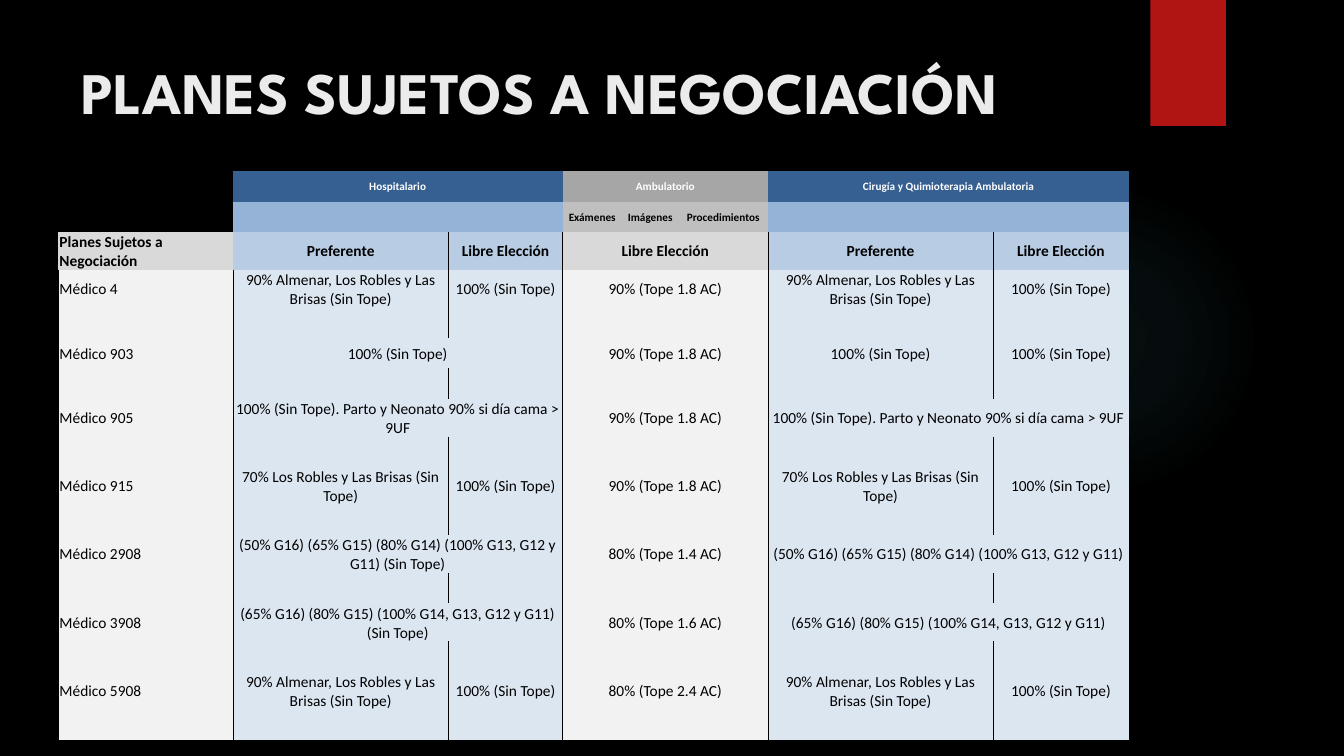
from dataclasses import dataclass
from typing import Any

from lxml import etree
from pptx import Presentation
from pptx.dml.color import RGBColor
from pptx.enum.shapes import MSO_SHAPE
from pptx.enum.text import MSO_ANCHOR, PP_ALIGN
from pptx.oxml.ns import qn
from pptx.util import Inches, Pt

OVAL, RECT = MSO_SHAPE.OVAL, MSO_SHAPE.RECTANGLE
TOP, MIDDLE = MSO_ANCHOR.TOP, MSO_ANCHOR.MIDDLE
LEFT, CENTER = PP_ALIGN.LEFT, PP_ALIGN.CENTER
UNIT = Inches(0.01)
WIDE, HIGH = 1333, 750
COLS = (173, 214, 113, 26, 33, 25, 31, 32, 57, 223, 135)
ROW = 30
EDGES = {0, 1, 2, 3, 9, 10, 11}
INSETS = {"margin_left": UNIT, "margin_right": UNIT, "margin_top": UNIT, "margin_bottom": 0}


@dataclass(frozen=True)
class Theme:
    back: str = "000000"
    ink: str = "000000"
    white: str = "FFFFFF"
    title: str = "EBEBEB"
    red: str = "B01513"
    glow: str = "50B9C1"
    navy: str = "366092"
    blue: str = "95B3D7"
    sky: str = "B8CCE4"
    pale: str = "DCE6F1"
    dark: str = "A6A6A6"
    mid: str = "BFBFBF"
    gray: str = "D9D9D9"
    light: str = "F2F2F2"
    head_font: str = "League Spartan"
    font: str = "Calibri"
    head: int = 42
    small: int = 8
    body: int = 11
    line: float = 0.5


@dataclass(frozen=True)
class Box:
    x: int
    y: int
    w: int
    h: int

    def place(self) -> tuple[int, ...]:
        return tuple(v * UNIT for v in (self.x, self.y, self.w, self.h))


@dataclass(frozen=True)
class Cell:
    col: int
    span: int
    text: str
    fill: str


@dataclass(frozen=True)
class Style:
    size: int
    bold: bool
    ink: str


@dataclass(frozen=True)
class Plan:
    name: str
    hosp: tuple[str, ...]
    amb: str
    surg: tuple[str, ...]


T = Theme()
FREE = "100% (Sin Tope)"
THREE = ("90% Almenar, Los Robles y Las Brisas (Sin Tope)", FREE)
BIRTH = ("100% (Sin Tope). Parto y Neonato 90% si día cama > 9UF",)
TWO = ("70% Los Robles y Las Brisas (Sin Tope)", FREE)
G29 = "(50% G16) (65% G15) (80% G14) (100% G13, G12 y G11)"
G39 = "(65% G16) (80% G15) (100% G14, G13, G12 y G11)"
PLANS = (
    Plan("Médico 4", THREE, "90% (Tope 1.8 AC)", THREE),
    Plan("Médico 903", (FREE,), "90% (Tope 1.8 AC)", (FREE, FREE)),
    Plan("Médico 905", BIRTH, "90% (Tope 1.8 AC)", BIRTH),
    Plan("Médico 915", TWO, "90% (Tope 1.8 AC)", TWO),
    Plan("Médico 2908", (f"{G29} (Sin Tope)",), "80% (Tope 1.4 AC)", (G29,)),
    Plan("Médico 3908", (f"{G39} (Sin Tope)",), "80% (Tope 1.6 AC)", (G39,)),
    Plan("Médico 5908", THREE, "80% (Tope 2.4 AC)", THREE),
)


def apply(item: Any, vals: dict[str, Any]) -> None:
    for key, val in vals.items():
        setattr(item, key, val)


def paint(fill: Any, color: str) -> None:
    fill.solid()
    fill.fore_color.rgb = RGBColor.from_string(color)


def write(para: Any, text: str, face: str, style: Style, align: Any) -> None:
    para.alignment = align
    run = para.add_run()
    run.text = text
    apply(run.font, {"name": face, "size": Pt(style.size), "bold": style.bold})
    run.font.color.rgb = RGBColor.from_string(style.ink)


def shape(slide: Any, kind: Any, box: Box, color: str) -> Any:
    item = slide.shapes.add_shape(kind, *box.place())
    item.shadow.inherit = False
    item.line.fill.background()
    paint(item.fill, color)
    return item


def glow(slide: Any, box: Box) -> None:
    item = shape(slide, OVAL, box, T.glow)
    old = item._element.spPr.find(qn("a:solidFill"))
    grad = etree.Element(qn("a:gradFill"), rotWithShape="1")
    stops = etree.SubElement(grad, qn("a:gsLst"))
    for pos, alpha in ((0, 7), (36, 6), (69, 0), (100, 0)):
        stop = etree.SubElement(stops, qn("a:gs"), pos=str(pos * 1000))
        tint = etree.SubElement(stop, qn("a:srgbClr"), val=T.glow)
        etree.SubElement(tint, qn("a:alpha"), val=str(alpha * 1000))
    ring = etree.SubElement(grad, qn("a:path"), path="circle")
    etree.SubElement(ring, qn("a:fillToRect"), dict.fromkeys("ltrb", "50000"))
    old.getparent().replace(old, grad)


def border(cell: Any, sides: set[str]) -> None:
    props = cell._tc.get_or_add_tcPr()
    for spot, side in enumerate("LRTB"):
        line = etree.Element(qn(f"a:ln{side}"), w=str(Pt(T.line)))
        if side in sides:
            fill = etree.SubElement(line, qn("a:solidFill"))
            etree.SubElement(fill, qn("a:srgbClr"), val=T.ink)
        else:
            etree.SubElement(line, qn("a:noFill"))
        props.insert(spot, line)


def put(table: Any, row: int, item: Cell, style: Style) -> None:
    last = item.col + item.span - 1
    for col in range(item.col, last + 1):
        cell = table.cell(row, col)
        apply(cell, INSETS | {"vertical_anchor": MIDDLE})
        if item.fill:
            paint(cell.fill, item.fill)
        else:
            cell.fill.background()
        sides = set()
        if row > 2 or (row == 2 and col > 0):
            if item.col in EDGES and (row, item.col) != (2, 1):
                sides |= {"L"} if col == item.col else set()
            if last + 1 in EDGES:
                sides |= {"R"} if col == last else set()
        border(cell, sides)
        para = cell.text_frame.paragraphs[0]
        if item.text and col == item.col:
            write(para, item.text, T.font, style, CENTER if col else LEFT)
        else:
            etree.SubElement(para._p, qn("a:endParaRPr"), sz=str(T.small * 100))
    if item.span > 1:
        table.cell(row, item.col).merge(table.cell(row, last))


def pair(col: int, texts: tuple[str, ...], fill: str) -> list[Cell]:
    span = 3 - len(texts)
    return [Cell(col + i, span, text, fill) for i, text in enumerate(texts)]


def band(name: str, hosp: tuple[str, ...], amb: str, surg: tuple[str, ...],
         side: str, fill: str) -> list[Cell]:
    return [Cell(0, 1, name, side), *pair(1, hosp, fill),
            Cell(3, 6, amb, side), *pair(9, surg, fill)]


def lines() -> list[tuple[list[Cell], Style]]:
    small, bold = Style(T.small, True, T.ink), Style(T.body, True, T.ink)
    plain, empty = Style(T.body, False, T.ink), ("", "")
    heads = ("Preferente", "Libre Elección")
    parts = ("Exámenes", "Imágenes", "Procedimientos")
    rows = [
        ([Cell(0, 1, "", ""), Cell(1, 2, "Hospitalario", T.navy),
          Cell(3, 6, "Ambulatorio", T.dark),
          Cell(9, 2, "Cirugía y Quimioterapia Ambulatoria", T.navy)], Style(T.small, True, T.white)),
        ([Cell(0, 1, "", ""), *pair(1, empty, T.blue),
          *(Cell(3 + 2 * i, 2, text, T.mid) for i, text in enumerate(parts)),
          *pair(9, empty, T.blue)], small),
        (band("Planes Sujetos a Negociación", heads, heads[1], heads, T.gray, T.sky), bold),
    ]
    for i, plan in enumerate(PLANS):
        rows.append((band(plan.name, plan.hosp, plan.amb, plan.surg, T.light, T.pale), plain))
        gap = band("", empty, "", empty, T.light, T.pale)
        if i < len(PLANS) - 2:
            gap[3:4] = [Cell(col, 1, "", T.light) for col in range(3, 9)]
        rows.append((gap, plain))
    return rows


def main() -> None:
    deck = Presentation()
    apply(deck, {"slide_width": WIDE * UNIT, "slide_height": HIGH * UNIT})
    slide = deck.slides.add_slide(deck.slide_layouts[6])
    paint(slide.background.fill, T.back)
    glow(slide, Box(941, 183, 308, 308))
    shape(slide, RECT, Box(1141, 0, 75, 125), T.red)
    frame = slide.shapes.add_textbox(*Box(71, 50, 1029, 153).place()).text_frame
    apply(frame, {"word_wrap": True, "vertical_anchor": TOP})
    write(frame.paragraphs[0], "PLANES SUJETOS A NEGOCIACIÓN", T.head_font,
          Style(T.head, True, T.title), LEFT)
    rows = lines()
    box = Box(58, 170, sum(COLS), ROW * len(rows))
    table = slide.shapes.add_table(len(rows), len(COLS), *box.place()).table
    apply(table, {"first_row": False, "horz_banding": False})
    for col, size in zip(table.columns, COLS):
        col.width = size * UNIT
    for row, (cells, style) in enumerate(rows):
        table.rows[row].height = ROW * UNIT
        for item in cells:
            put(table, row, item, style)
    deck.save("out.pptx")


if __name__ == "__main__":
    main()
